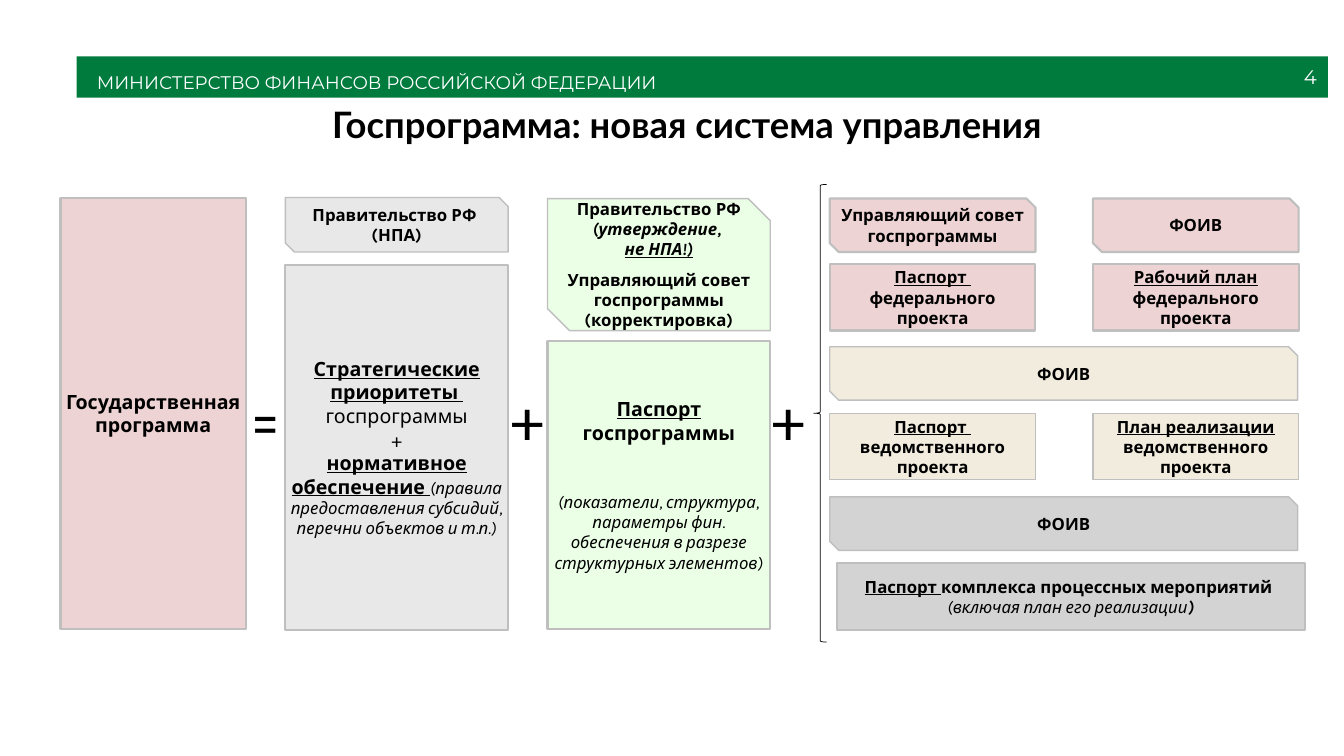
from dataclasses import dataclass
from typing import NamedTuple

from lxml import etree
from pptx import Presentation
from pptx import util as u
from pptx.dml.color import RGBColor
from pptx.enum import shapes, text

COLORS = {
    "green": "007B3E", "white": "FFFFFF", "black": "000000", "border": "BFBFBF",
    "pink": "EDD3D3", "grey": "E8E8E8", "mint": "EBFEE6", "sand": "F2ECDE",
    "silver": "D3D3D3",
}
RECT = shapes.MSO_SHAPE.RECTANGLE
SNIP = shapes.MSO_SHAPE.SNIP_2_DIAG_RECTANGLE
CENTER, RIGHT = text.PP_ALIGN.CENTER, text.PP_ALIGN.RIGHT
MIDDLE, TOP = text.MSO_ANCHOR.MIDDLE, text.MSO_ANCHOR.TOP


class Run(NamedTuple):
    text: str
    style: str = "b"  # any of b, i, u
    size: float = 12
    font: str = "Karla"
    color: str = "black"


class Para(NamedTuple):
    runs: list[Run]
    before: float = 0


@dataclass
class Card:
    x: float
    y: float
    w: float
    h: float
    fill: str
    paras: list[Para]
    shape: int = RECT
    line: float = 1.5


def rgb(name: str) -> RGBColor:
    return RGBColor.from_string(COLORS[name])


def write(tf, paras: list[Para], align=CENTER, anchor=MIDDLE,
          insets: tuple = (0.1, 0.05, 0.1, 0.05)) -> None:
    tf.word_wrap = True
    tf.vertical_anchor = anchor
    tf.margin_left, tf.margin_top, tf.margin_right, tf.margin_bottom = map(u.Inches, insets)
    for i, para in enumerate(paras):
        p = tf.paragraphs[0] if i == 0 else tf.add_paragraph()
        p.alignment = align
        if para.before:
            p.space_before = u.Pt(para.before)
        for run in para.runs:
            r = p.add_run()
            r.text = run.text.rstrip("\n")
            f = r.font
            f.name, f.size = run.font, u.Pt(run.size)
            f.bold, f.italic, f.underline = (k in run.style for k in "biu")
            f.color.rgb = rgb(run.color)
            if run.text.endswith("\n"):
                p.add_line_break()


def add_shape(s, kind, box: tuple, fill: str = "", line: str = "", width: float = 1):
    sp = s.shapes.add_shape(kind, *map(u.Inches, box))
    sp.shadow.inherit = False
    if fill:
        sp.fill.solid()
        sp.fill.fore_color.rgb = rgb(fill)
    else:
        sp.fill.background()
    if line:
        sp.line.color.rgb = rgb(line)
        sp.line.width = u.Pt(width)
    else:
        sp.line.fill.background()
    return sp


def add_card(s, c: Card) -> None:
    sp = add_shape(s, c.shape, (c.x, c.y, c.w, c.h), c.fill, "border", c.line)
    side = 0.04 if c.line > 1 else 0
    write(sp.text_frame, c.paras, insets=(side, 0.05, side, 0.05))


def add_text(s, box: tuple, run: Run, align=CENTER, anchor=TOP) -> None:
    tb = s.shapes.add_textbox(*map(u.Inches, box))
    write(tb.text_frame, [Para([run])], align, anchor)


def plain(*lines: str) -> list[Para]:
    return [Para([Run(line)]) for line in lines]


prs = Presentation()
prs.slide_width, prs.slide_height = u.Inches(13.33), u.Inches(7.5)
s = prs.slides.add_slide(prs.slide_layouts[5])

# Header bar, page number and title
bar = add_shape(s, RECT, (0.76, 0.56, 12.41, 0.41), "green")
write(bar.text_frame,
      [Para([Run("МИНИСТЕРСТВО ФИНАНСОВ РОССИЙСКОЙ ФЕДЕРАЦИИ", "", 13, "Montserrat", "white")])],
      text.PP_ALIGN.LEFT, TOP, (0.2, 0.04, 0, 0.08))
bar.text_frame.paragraphs[0].line_spacing = 1.5
add_text(s, (10.16, 0.56, 3, 0.4), Run("4", "", 14, "Montserrat", "white"), RIGHT, MIDDLE)

title = s.shapes.title
title.left, title.top, title.width, title.height = map(u.Inches, (1.07, 0.99, 11.5, 0.53))
write(title.text_frame, [Para([Run("Госпрограмма: новая система управления", "b", 26, "Lato")])],
      insets=(0, 0.02, 0, 0))
title.text_frame.paragraphs[0].line_spacing = 0.85

# Programme, priorities and passport columns
cards = [
    Card(0.6, 1.96, 1.84, 4.28, "pink", [Para([Run("Государственная программа", "b", 14)])]),
    Card(2.83, 1.96, 2.21, 0.54, "grey", plain("Правительство РФ ", "(НПА)"), SNIP, 1),
    Card(2.83, 2.63, 2.21, 3.62, "grey", [
        Para([Run("Стратегические приоритеты ", "bu", 14)]),
        Para([Run("госпрограммы", "", 14)]),
        Para([Run("+", "", 14)]),
        Para([Run("нормативное обеспечение ", "bu", 14),
              Run("(правила предоставления субсидий, перечни объектов и т.п.)", "i")]),
    ]),
    Card(5.43, 1.97, 2.21, 1.31, "mint", [
        Para([Run("Правительство РФ "), Run("(утверждение, \n", "bi"), Run("не НПА!)", "biu")]),
        Para([Run("Управляющий совет госпрограммы")], 7.5),
        Para([Run("(корректировка)")]),
    ], SNIP, 1),
    Card(5.43, 3.38, 2.21, 2.86, "mint", [
        Para([Run("Паспорт ", "bu", 14), Run("госпрограммы", "b", 14)]),
        Para([Run("(показатели, структура, параметры фин. обеспечения "
                  "в разрезе структурных элементов)", "i")], 34),
    ]),
]

# Project columns: owners above, documents below
LEFT_X, RIGHT_X, HALF, FULL = 8.23, 10.84, 2.04, 4.64
for x, owner in ((LEFT_X, "Управляющий совет госпрограммы"), (RIGHT_X, "ФОИВ")):
    cards.append(Card(x, 1.97, HALF, 0.53, "pink", plain(owner), SNIP))
for y, fill in ((3.44, "sand"), (4.93, "silver")):
    cards.append(Card(LEFT_X, y, FULL, 0.53, fill, plain("ФОИВ"), SNIP, 1))
for y, fill, line, project, plan in (
        (2.62, "pink", 1.5, "федерального проекта", "Рабочий план "),
        (4.1, "sand", 1, "ведомственного проекта", "План реализации ")):
    cards += [
        Card(LEFT_X, y, HALF, 0.66, fill,
             [Para([Run("Паспорт ", "bu")]), Para([Run(project)])], line=line),
        Card(RIGHT_X, y, HALF, 0.66, fill,
             [Para([Run(plan, "bu"), Run(project)])], line=line),
    ]
cards.append(Card(8.3, 5.59, FULL, 0.66, "silver", [
    Para([Run("Паспорт ", "bu"), Run("комплекса процессных мероприятий ")]),
    Para([Run("(включая план его реализации", "i"), Run(")", "bi")]),
]))
for card in cards:
    add_card(s, card)

# Operators between the columns and the brace
for x, sign in ((2.32, "="), (4.92, "+"), (7.51, "+")):
    add_text(s, (x, 3.71, 0.63, 0.84), Run(sign, "", 44))
add_shape(s, shapes.MSO_SHAPE.LEFT_BRACE, (8.07, 1.83, 0.13, 4.54), line="black", width=0.5)

prs.save("out.pptx")
